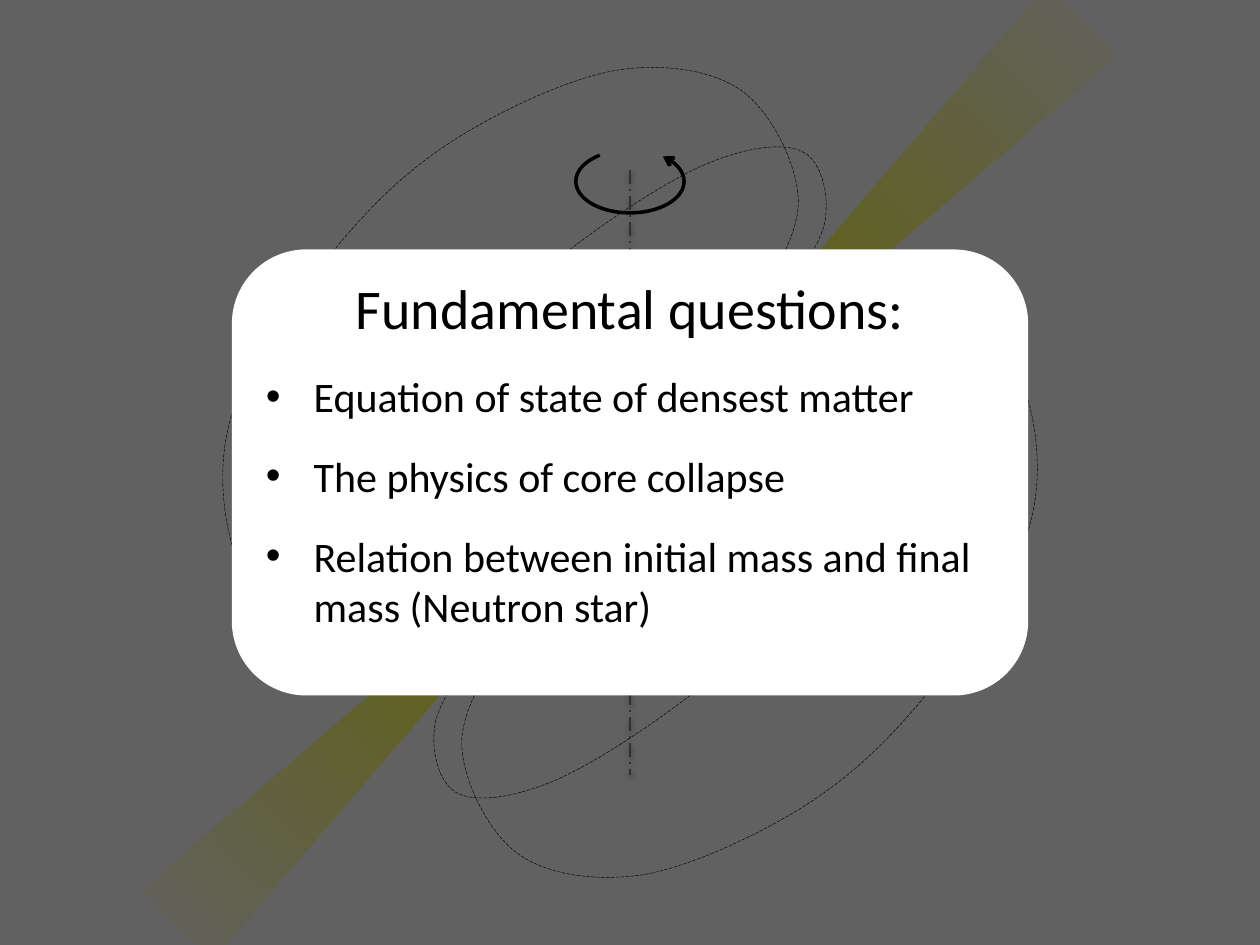
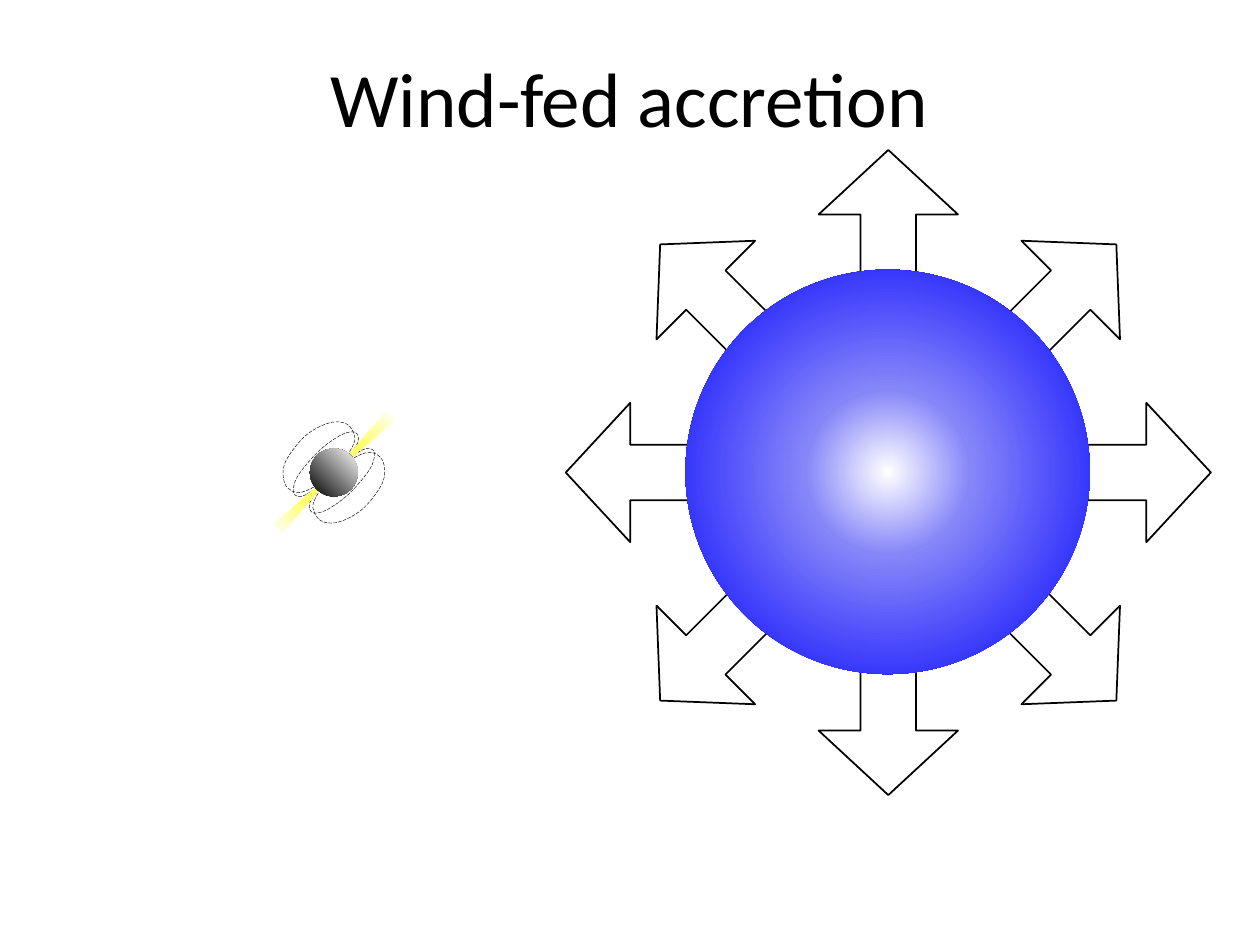
import math

from pptx import Presentation
from pptx import util as u
from pptx.dml.color import RGBColor
from pptx.enum import dml, shapes, text
from pptx.oxml import parse_xml
from pptx.oxml.ns import nsdecls, qn

SHAPE = shapes.MSO_SHAPE
BLACK, WHITE, GREY, BEAM_YELLOW = "000000", "FFFFFF", "808080", "FFFF66"
FONT = "Calibri"
TILT = 45  # degrees between the magnetic and the rotation axis

# Field lines on one side of the star, as Bezier points from its centre, in inches
OUTER_LOOP = [
    (-.64, .81), (-.7, .93), (-.96, 1.22), (-1.08, 1.46),
    (-1.2, 1.7), (-1.37, 1.97), (-1.33, 2.23),
    (-1.3, 2.49), (-1.11, 2.88), (-.87, 3.04),
    (-.63, 3.2), (-.25, 3.25), (.12, 3.19),
    (.5, 3.12), (1.01, 2.88), (1.38, 2.65),
    (1.74, 2.42), (2.02, 2.16), (2.32, 1.8),
    (2.61, 1.44), (3.02, .91), (3.15, .49),
    (3.29, .08), (3.23, -.38), (3.13, -.67),
    (3.04, -.96), (2.76, -1.13), (2.57, -1.22),
    (2.39, -1.32), (2.2, -1.27), (2.01, -1.24),
    (1.83, -1.21), (1.67, -1.13), (1.47, -1.03),
    (1.27, -.93), (.93, -.71), (.81, -.64)]
INNER_LOOP = [
    (-.7, .75), (-.77, .85), (-1.04, 1.14), (-1.18, 1.36),
    (-1.33, 1.57), (-1.52, 1.81), (-1.55, 2.01),
    (-1.58, 2.21), (-1.52, 2.48), (-1.36, 2.55),
    (-1.21, 2.62), (-.92, 2.58), (-.61, 2.45),
    (-.3, 2.32), (.15, 2.02), (.49, 1.76),
    (.82, 1.5), (1.1, 1.24), (1.41, .89),
    (1.72, .54), (2.15, .04), (2.34, -.31),
    (2.54, -.66), (2.59, -1.02), (2.58, -1.22),
    (2.56, -1.43), (2.39, -1.5), (2.26, -1.54),
    (2.13, -1.57), (1.97, -1.5), (1.82, -1.43),
    (1.67, -1.37), (1.53, -1.27), (1.35, -1.15),
    (1.17, -1.03), (.86, -.78), (.75, -.7)]


def rgb(hex_color):
    return RGBColor.from_string(hex_color)


def turn(x, y, degrees):
    """Rotate a point clockwise about (0, 0)."""
    c, s = math.cos(math.radians(degrees)), math.sin(math.radians(degrees))
    return x * c - y * s, x * s + y * c


class Deck:
    def __init__(self):
        self.prs = Presentation()
        self.prs.slide_width, self.prs.slide_height = u.Inches(10), u.Inches(7.5)
        self.slide = None

    def new_slide(self, layout):
        self.slide = self.prs.slides.add_slide(self.prs.slide_layouts[layout])
        return self.slide.shapes

    def group(self):
        return self.slide.shapes.add_group_shape().shapes

    def style_line(self, line, color, width, dash=None):
        line.color.rgb = rgb(color)
        line.width = u.Pt(width)
        if dash:
            line.dash_style = dash

    def shape(self, canvas, kind, box, fill=None, line=None, rotation=0, adjust=()):
        item = canvas.add_shape(kind, *map(u.Inches, box))
        item.shadow.inherit = False
        item.rotation = rotation
        for i, value in enumerate(adjust):
            item.adjustments[i] = value
        if fill:
            item.fill.solid()
            item.fill.fore_color.rgb = rgb(fill)
        else:
            item.fill.background()
        if line:
            self.style_line(item.line, *line)
        else:
            item.line.fill.background()
        return item

    def radial(self, item, stops, focus=(50, 50, 50, 50)):
        """Fill with a circular gradient; focus is left, top, right, bottom in %."""
        gs = "".join(f'<a:gs pos="{pos * 1000}"><a:srgbClr val="{color}"/></a:gs>'
                     for pos, color in stops)
        l, t, r, b = (f * 1000 for f in focus)
        props = item._element.spPr
        props.replace(props.find(qn("a:noFill")), parse_xml(
            f'<a:gradFill {nsdecls("a")} rotWithShape="1"><a:gsLst>{gs}</a:gsLst>'
            f'<a:path path="circle"><a:fillToRect l="{l}" t="{t}" r="{r}" b="{b}"/>'
            '</a:path></a:gradFill>'))

    def field_line(self, canvas, points, center, scale):
        """Draw a loop upright, then tilt it; a negative scale mirrors it."""
        cx, cy = map(u.Inches, center)
        upright = []
        for x, y in points:
            dx, dy = turn(x * scale, y * scale, -TILT)
            upright.append((cx + u.Inches(dx), cy + u.Inches(dy)))
        builder = canvas.build_freeform(*upright[0])
        builder.add_line_segments(upright[1:], close=False)
        loop = builder.convert_to_shape()
        # Each three segments become one Bezier curve
        steps = loop._element.xpath(".//a:lnTo")
        for i in range(0, len(steps), 3):
            curve = parse_xml(f'<a:cubicBezTo {nsdecls("a")}/>')
            steps[i].addprevious(curve)
            for step in steps[i:i + 3]:
                curve.append(step[0])
                step.getparent().remove(step)
        # Tilting happens about the loop's own middle, so move that middle too
        dx, dy = turn(loop.left + loop.width / 2 - cx,
                      loop.top + loop.height / 2 - cy, TILT)
        loop.left = round(cx + dx - loop.width / 2)
        loop.top = round(cy + dy - loop.height / 2)
        loop.rotation = TILT
        loop.shadow.inherit = False
        loop.fill.background()
        self.style_line(loop.line, BLACK, 0.25, dml.MSO_LINE.LONG_DASH)

    def magnetosphere(self, center, scale):
        """Field lines and the two light beams; returns their group."""
        canvas = self.group()
        for points in (OUTER_LOOP, INNER_LOOP):
            for side in (1, -1):
                self.field_line(canvas, points, center, side * scale)
        w, h = 0.79 * scale, 10.17 * scale
        box = center[0] - w / 2, center[1] - h / 2, w, h
        beams = self.shape(canvas, SHAPE.FLOWCHART_COLLATE, box, rotation=TILT)
        self.radial(beams, [(45, BEAM_YELLOW), (100, WHITE)])
        return canvas

    def axis(self, start, end):
        line = self.slide.shapes.add_connector(
            shapes.MSO_CONNECTOR.STRAIGHT, *map(u.Inches, start + end))
        self.style_line(line.line, GREY, 1, dml.MSO_LINE.LONG_DASH_DOT)
        line._element.spPr.append(parse_xml(
            f'<a:effectLst {nsdecls("a")}><a:outerShdw blurRad="39400" dist="20300" '
            'dir="5400000" rotWithShape="0"><a:srgbClr val="000000">'
            '<a:alpha val="38000"/></a:srgbClr></a:outerShdw></a:effectLst>'))

    def put_text(self, placeholder, box, paragraphs, size, wrap=True):
        """Place a placeholder on top of the slide and fill it."""
        (placeholder.left, placeholder.top,
         placeholder.width, placeholder.height) = map(u.Inches, box)
        self.slide.shapes._spTree.append(placeholder._element)
        frame = placeholder.text_frame
        frame.word_wrap = wrap
        frame.auto_size = text.MSO_AUTO_SIZE.NONE
        frame.margin_left = frame.margin_right = 0
        frame.margin_top = frame.margin_bottom = 0
        for i, words in enumerate(paragraphs):
            p = frame.add_paragraph() if i else frame.paragraphs[0]
            run = p.add_run()
            run.text = words
            run.font.size, run.font.name = u.Pt(size), FONT
            run.font.color.rgb = rgb(BLACK)
        return frame

    def title(self, box, words, size):
        frame = self.put_text(self.slide.shapes.title, box, [words], size, wrap=False)
        frame.vertical_anchor = text.MSO_ANCHOR.MIDDLE
        frame.paragraphs[0].alignment = text.PP_ALIGN.CENTER

    def bullets(self, box, items, size):
        frame = self.put_text(self.slide.placeholders[1], box, items, size)
        frame.vertical_anchor = text.MSO_ANCHOR.TOP
        for p in frame.paragraphs:
            p.space_before, p.space_after = u.Pt(0), u.Pt(16.8)
            props = p._p.get_or_add_pPr()
            props.set("marL", str(u.Inches(0.38)))
            props.set("indent", str(u.Inches(-0.38)))
            props.append(parse_xml(f'<a:buFont {nsdecls("a")} typeface="Arial"/>'))
            props.append(parse_xml(f'<a:buChar {nsdecls("a")} char="\u2022"/>'))


deck = Deck()

# Slide 1: questions on a card over the dimmed pulsar
canvas = deck.new_slide(1)
deck.magnetosphere((5, 3.75), 1)
deck.axis((5, 1.35), (5, 6.15))
spin = deck.shape(canvas, SHAPE.ARC, (4.57, 1.19, 0.86, 0.5), line=(BLACK, 2),
                  adjust=(193.678, 132.53))
spin._element.spPr.find(qn("a:ln")).append(
    parse_xml(f'<a:headEnd {nsdecls("a")} type="arrow"/>'))
dimmer = deck.shape(canvas, SHAPE.RECTANGLE, (0, 0, 10, 7.5), fill=BLACK)
dimmer._element.spPr.find(qn("a:solidFill"))[0].append(
    parse_xml(f'<a:alpha {nsdecls("a")} val="62000"/>'))
deck.shape(canvas, SHAPE.ROUNDED_RECTANGLE, (1.84, 1.98, 6.32, 3.54), fill=WHITE)
deck.title((2.11, 2.17, 5.78, 0.54), "Fundamental questions:", 32)
deck.bullets((2.11, 2.94, 5.78, 2.4), [
    "Equation of state of densest matter",
    "The physics of core collapse",
    "Relation between initial mass and final mass (Neutron star)"], 24)

# Slide 2: small pulsar beside a giant star with its wind
deck.new_slide(5)
pulsar = deck.magnetosphere((2.65, 3.75), 0.125)
neutron_star = deck.shape(pulsar, SHAPE.OVAL, (2.46, 3.56, 0.38, 0.38))
deck.radial(neutron_star, [(0, WHITE), (100, BLACK)], focus=(100, 0, 0, 100))
giant = deck.group()
for angle in (315, 0):
    deck.shape(giant, SHAPE.QUAD_ARROW, (4.49, 1.19, 5.12, 5.12), line=(BLACK, 1),
               rotation=angle, adjust=(0.086, 0.108, 0.1))
star = deck.shape(giant, SHAPE.OVAL, (5.44, 2.14, 3.21, 3.21))
deck.radial(star, [(0, WHITE), (29, "8686F9"), (100, "0000FF")])
deck.title((2.5, 0.35, 4.99, 0.84), "Wind-fed accretion", 44)

deck.prs.save("out.pptx")
